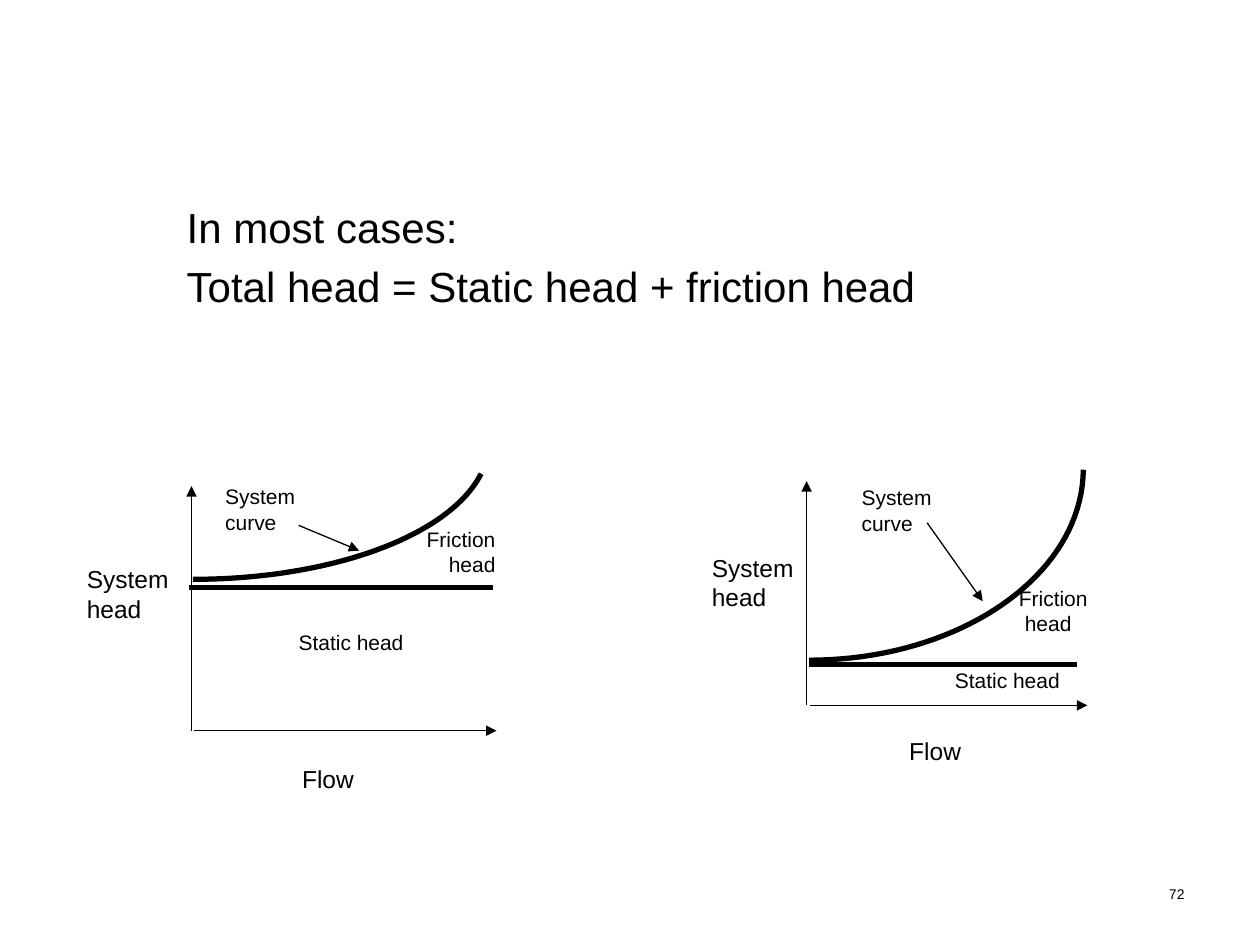
"""Build a slide comparing system curves with high and low static head."""
from dataclasses import dataclass

from lxml.etree import SubElement
from pptx import Presentation
from pptx.dml.color import RGBColor
from pptx.enum.shapes import MSO_CONNECTOR as Connector
from pptx.enum.text import MSO_ANCHOR as Anchor, PP_ALIGN as Align
from pptx.oxml.ns import qn
from pptx.shapes.group import GroupShape
from pptx.slide import Slide
from pptx.text.text import TextFrame
from pptx.util import Cm, Pt

Point = tuple[float, float]
Area = tuple[float, float, float, float]


@dataclass(frozen=True)
class Theme:
    ink: RGBColor = RGBColor(0, 0, 0)
    font: str = "Arial"
    body: float = 24
    axis_label: float = 14
    label: float = 12
    number: float = 8
    thin: float = 0.75
    thick: float = 3


@dataclass(frozen=True)
class Label:
    text: str
    area: Area
    size: float
    align: Align = Align.LEFT
    last_indent: float = 0


@dataclass(frozen=True)
class Line:
    start: Point
    end: Point
    arrow: bool = True


@dataclass(frozen=True)
class Diagram:
    curve: tuple[Point, Point, Point, Point]
    lines: tuple[Line, ...]
    labels: tuple[Label, ...]


THEME = Theme()
STATEMENT = "In most cases:\nTotal head = Static head + friction head"
NUMBER = Label("72", (18.21, 17.73, 5.92, 0.94), THEME.number, Align.RIGHT)

HIGH_STATIC = Diagram(
    curve=((3.89, 11.68), (6.68, 11.68), (9.07, 10.8), (9.7, 9.55)),
    lines=(
        Line((3.91, 14.73), (10.01, 14.73)),
        Line((3.86, 14.73), (3.86, 9.8)),
        Line((3.81, 11.84), (9.93, 11.84), arrow=False),
        Line((6.02, 10.59), (7.24, 11.1)),
    ),
    labels=(
        Label("System\nhead", (1.5, 11.25, 2.72, 1.68), THEME.axis_label),
        Label("Flow", (5.84, 15.27, 1.8, 0.99), THEME.axis_label),
        Label("Static head", (5.77, 12.57, 4.42, 0.89), THEME.label),
        Label("Friction\nhead", (8.03, 10.49, 2.21, 1.47), THEME.label, Align.RIGHT),
        Label("System\ncurve", (4.29, 9.63, 3.53, 1.47), THEME.label),
    ),
)

LOW_STATIC = Diagram(
    curve=((16.31, 13.31), (19.33, 13.31), (21.82, 11.61), (21.84, 9.47)),
    lines=(
        Line((16.33, 14.22), (21.92, 14.22)),
        Line((16.26, 14.22), (16.26, 9.7)),
        Line((16.31, 13.39), (21.72, 13.39), arrow=False),
        Line((18.69, 10.54), (19.81, 12.12)),
    ),
    labels=(
        Label("System head", (14.1, 11.02, 2.49, 1.52), THEME.axis_label),
        Label("Flow", (18.08, 14.71, 1.65, 0.91), THEME.axis_label),
        Label("Static head", (19, 13.34, 3.07, 0.81), THEME.label),
        Label("Friction\nhead", (20.29, 11.68, 2.03, 1.35), THEME.label, last_indent=0.12),
        Label("System\ncurve", (17.12, 9.65, 2.06, 1.35), THEME.label),
    ),
)


def format_text(frame: TextFrame, size: float, align: Align = Align.LEFT) -> None:
    frame.word_wrap = True
    frame.vertical_anchor = Anchor.TOP
    for para in frame.paragraphs:
        para.alignment = align
        for span in para.runs:
            span.font.size = Pt(size)
            span.font.name = THEME.font
            span.font.color.rgb = THEME.ink


def add_label(parent: Slide | GroupShape, label: Label) -> None:
    box = parent.shapes.add_textbox(*map(Cm, label.area))
    box.text_frame.text = label.text
    format_text(box.text_frame, label.size, label.align)
    if label.last_indent:
        properties = box.text_frame.paragraphs[-1]._p.get_or_add_pPr()
        properties.set("marL", str(Cm(label.last_indent)))


def add_line(group: GroupShape, line: Line) -> None:
    connector = group.shapes.add_connector(
        Connector.STRAIGHT, *map(Cm, line.start + line.end)
    )
    connector.line.color.rgb = THEME.ink
    connector.line.width = Pt(THEME.thin if line.arrow else THEME.thick)
    if line.arrow:
        SubElement(connector.line._get_or_add_ln(), qn("a:tailEnd"), type="triangle")
    SubElement(connector._element.spPr, qn("a:effectLst"))


def bezier_point(points: tuple[Point, ...], t: float) -> Point:
    weights = ((1 - t) ** 3, 3 * t * (1 - t) ** 2, 3 * t**2 * (1 - t), t**3)
    x, y = (sum(w * p[axis] for w, p in zip(weights, points)) for axis in (0, 1))
    return Cm(x), Cm(y)


def add_curve(group: GroupShape, points: tuple[Point, ...], steps: int = 40) -> None:
    first, *rest = [bezier_point(points, i / steps) for i in range(steps + 1)]
    builder = group.shapes.build_freeform(*first)
    builder.add_line_segments(rest, close=False)
    curve = builder.convert_to_shape()
    curve.shadow.inherit = False
    curve.fill.background()
    curve.line.color.rgb = THEME.ink
    curve.line.width = Pt(THEME.thick)


def add_diagram(page: Slide, diagram: Diagram) -> None:
    group = page.shapes.add_group_shape()
    add_curve(group, diagram.curve)
    for line in diagram.lines:
        add_line(group, line)
    for label in diagram.labels:
        add_label(group, label)


def add_statement(page: Slide) -> None:
    body = page.placeholders[1]
    body.left, body.top, body.width, body.height = map(Cm, (3.51, 3.94, 18.01, 3.61))
    body.text_frame.text = STATEMENT
    for index, para in enumerate(body.text_frame.paragraphs):
        properties = para._p.get_or_add_pPr()
        properties.set("marL", str(Cm(0.95)))
        properties.set("indent", str(-Cm(0.95)))
        para.space_before = Pt(0.2 * THEME.body if index else 0)
        SubElement(properties, qn("a:buNone"))
    format_text(body.text_frame, THEME.body)


def main() -> None:
    deck = Presentation()
    deck.slide_width, deck.slide_height = Cm(25.4), Cm(19.05)
    page = deck.slides.add_slide(deck.slide_layouts[1])
    title = page.shapes.title._element
    title.getparent().remove(title)
    add_label(page, NUMBER)
    add_statement(page)
    for diagram in (HIGH_STATIC, LOW_STATIC):
        add_diagram(page, diagram)
    deck.save("out.pptx")


if __name__ == "__main__":
    main()
